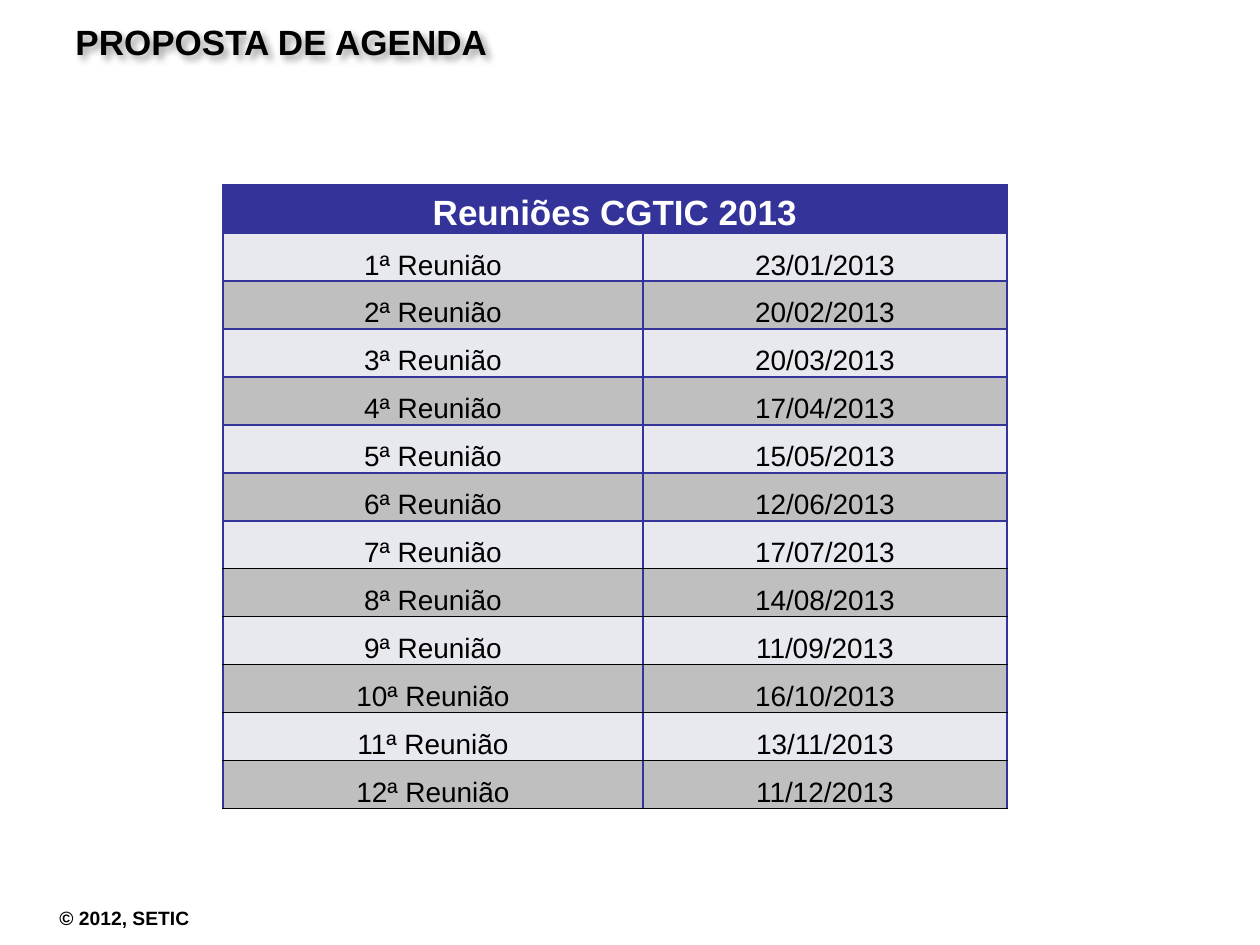
from pptx import Presentation
from pptx.dml.color import RGBColor as Rgb
from pptx.enum.text import MSO_ANCHOR as Anchor, PP_ALIGN as Align
from pptx.oxml import parse_xml
from pptx.oxml.ns import nsdecls
from pptx.util import Emu, Pt

HUES = {"ink": "000000", "head": "333399", "paper": "FFFFFF",
        "light": "E8E8EF", "dark": "BFBFBF"}
DATES = ["23/01", "20/02", "20/03", "17/04", "15/05", "12/06",
         "17/07", "14/08", "11/09", "16/10", "13/11", "11/12"]
THICK, THIN = ("head", 1), ("ink", 0.5)


def px(num):
    return Emu(round(num * 914400 / 126))


class Deck:
    """Holds the style and the current slide."""

    def __init__(self, wide, high):
        self.file = Presentation()
        self.file.slide_width, self.file.slide_height = px(wide), px(high)
        self.slide = self.file.slides.add_slide(self.file.slide_layouts[6])

    def style(self, para, text, size, hue="ink", bold=False):
        para.text = text
        font = para.font
        font.name, font.size, font.bold = "Arial", Pt(size), bold
        font.color.rgb = Rgb.from_string(HUES[hue])

    def text(self, area, text, size, wrap=True):
        box = self.slide.shapes.add_textbox(*map(px, area))
        frame = box.text_frame
        frame.word_wrap, frame.vertical_anchor = wrap, Anchor.MIDDLE
        self.style(frame.paragraphs[0], text, size, bold=True)
        return box

    def shade(self, box):
        box._element.spPr.append(parse_xml(
            f'<a:effectLst {nsdecls("a")}><a:outerShdw blurRad="50800" dist="38100" '
            'dir="2700000" algn="tl" rotWithShape="0"><a:srgbClr val="000000">'
            '<a:alpha val="40000"/></a:srgbClr></a:outerShdw></a:effectLst>'))

    def edge(self, cell, side, hue, width):
        cell._tc.get_or_add_tcPr().append(parse_xml(
            f'<a:ln{side} {nsdecls("a")} w="{Pt(width)}"><a:solidFill>'
            f'<a:srgbClr val="{HUES[hue]}"/></a:solidFill></a:ln{side}>'))

    def cell(self, cell, text, fill, top, base, **look):
        for side, line in zip("LRTB", (THICK, THICK, top, base)):
            self.edge(cell, side, *line)
        cell.fill.solid()
        cell.fill.fore_color.rgb = Rgb.from_string(HUES[fill])
        cell.margin_left = cell.margin_right = cell.margin_top = px(1)
        cell.margin_bottom = 0
        cell.vertical_anchor = Anchor.BOTTOM
        para = cell.text_frame.paragraphs[0]
        para.alignment = Align.CENTER
        self.style(para, text, **look)

    def table(self, left, top, cols, step, title, rows, thick):
        count = len(rows) + 1
        area = left, top, sum(cols), step * count
        grid = self.slide.shapes.add_table(count, len(cols), *map(px, area)).table
        for col, wide in zip(grid.columns, cols):
            col.width = px(wide)
        for row in grid.rows:
            row.height = px(step)
        grid.cell(0, 0).merge(grid.cell(0, len(cols) - 1))
        for c in range(len(cols)):
            self.cell(grid.cell(0, c), "" if c else title, "head", THICK, THICK,
                      size=20, hue="paper", bold=True)
        for r, row in enumerate(rows, 1):
            roof = THICK if r <= thick else THIN
            base = THICK if r < thick else THIN
            for c, text in enumerate(row):
                self.cell(grid.cell(r, c), text, "light" if r % 2 else "dark",
                          roof, base, size=16)


def main():
    deck = Deck(1260, 945)
    deck.text((47, 900, 161, 36), "© 2012, SETIC", 11, wrap=False)
    deck.shade(deck.text((63, 6, 954, 70), "PROPOSTA DE AGENDA", 20))
    rows = [(f"{n}ª Reunião", f"{date}/2013") for n, date in enumerate(DATES, 1)]
    deck.table(223, 185, (420, 364), 48, "Reuniões CGTIC 2013", rows, thick=7)
    deck.file.save("out.pptx")


if __name__ == "__main__":
    main()
